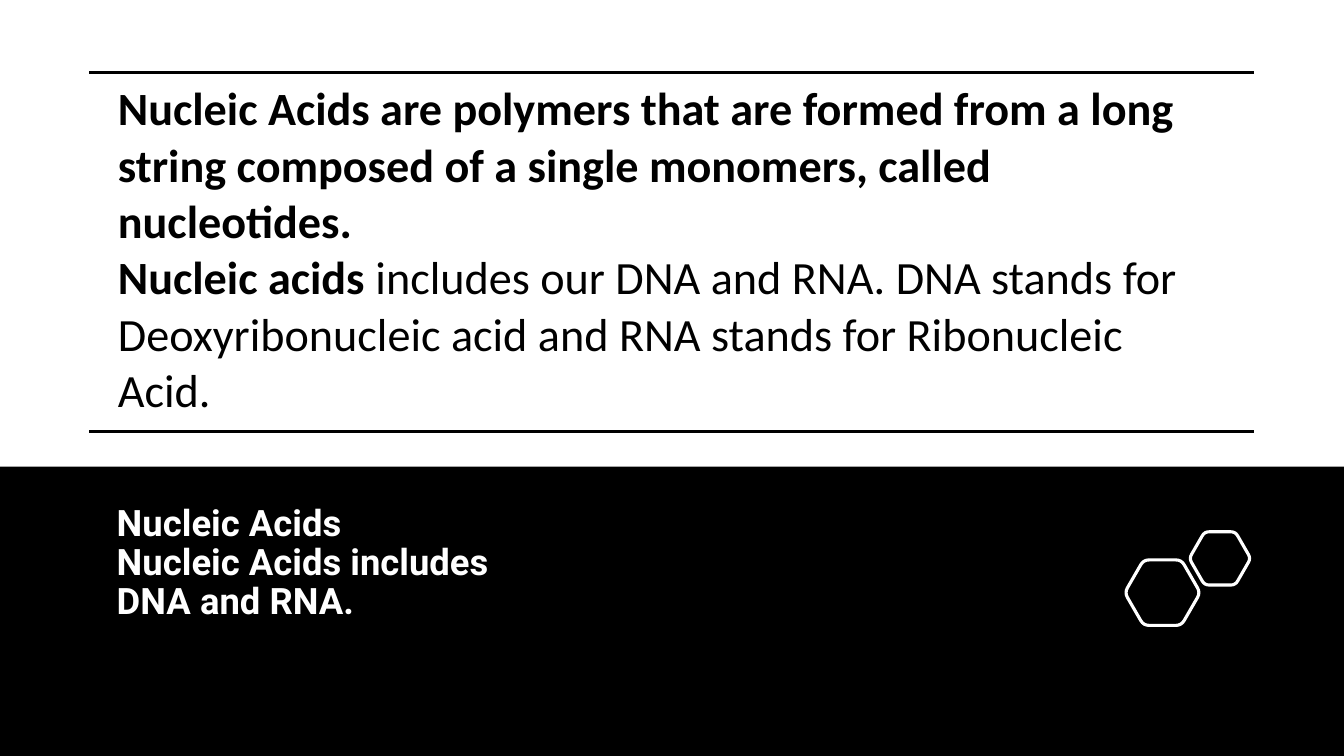
from math import cos, sin, radians
from lxml import etree
from pptx import Presentation
from pptx.dml.color import RGBColor
from pptx.enum import shapes, text
from pptx.oxml import ns
from pptx.util import Inches, Pt

# Content: one list of runs per line, each run is (words, bold)
BODY = [
    [("Nucleic Acids are polymers that are formed from a long string composed "
      "of a single monomers, called nucleotides. ", True)],
    [("Nucleic acids", True),
     (" includes our DNA and RNA. DNA stands for Deoxyribonucleic acid and RNA "
      "stands for Ribonucleic Acid.", False)],
]
TITLE = ["Nucleic Acids", "Nucleic Acids includes DNA and RNA. "]
HEXES = [(11.53, 5.88, 0.375), (12.1, 5.54, 0.305)]  # centre x, centre y, radius
WIDTH, HEIGHT, SPLIT = 13.33, 7.5, 4.63
BLACK, WHITE = "000000", "FFFFFF"


def color(code):
    return RGBColor.from_string(code)


def add_run(para, words, font, size, code, bold):
    run = para.add_run()
    run.text = words
    run.font.name, run.font.size, run.font.bold = font, Pt(size), bold
    run.font.color.rgb = color(code)


def hex_points(cx, cy, radius, cut=0.15, steps=4):
    """Corners of a hexagon, each one rounded by a short curve."""
    tips = [(cx + radius * cos(radians(a)), cy + radius * sin(radians(a)))
            for a in range(0, 360, 60)]
    points = []
    for i, tip in enumerate(tips):
        prev, after = tips[i - 1], tips[(i + 1) % 6]
        start = [t + cut * (p - t) for t, p in zip(tip, prev)]
        end = [t + cut * (n - t) for t, n in zip(tip, after)]
        for k in range(steps + 1):
            f = k / steps
            points.append(tuple((1 - f) ** 2 * s + 2 * f * (1 - f) * t + f * f * e
                                for s, t, e in zip(start, tip, end)))
    return points


def add_border(cell, side, code, width):
    line = etree.SubElement(cell._tc.get_or_add_tcPr(), ns.qn("a:" + side),
                            w=str(Pt(width)))
    fill = etree.SubElement(line, ns.qn("a:solidFill"))
    etree.SubElement(fill, ns.qn("a:srgbClr"), val=code)


deck = Presentation()
deck.slide_width, deck.slide_height = Inches(WIDTH), Inches(HEIGHT)
slide = deck.slides.add_slide(deck.slide_layouts[6])

# Black band
band = slide.shapes.add_shape(shapes.MSO_SHAPE.RECTANGLE, 0, Inches(SPLIT),
                              Inches(WIDTH), Inches(HEIGHT - SPLIT))
band.shadow.inherit = False
band.fill.solid()
band.fill.fore_color.rgb = color(BLACK)
band.line.fill.background()

# Title
box = slide.shapes.add_textbox(Inches(1.06), Inches(4.96), Inches(4.03), Inches(1.73))
frame = box.text_frame
frame.word_wrap = True
for i, words in enumerate(TITLE):
    para = frame.add_paragraph() if i else frame.paragraphs[0]
    para.line_spacing = 0.9
    add_run(para, words, "Roboto", 26, WHITE, True)

# Hexagons
for cx, cy, radius in HEXES:
    first, *rest = [(Inches(x), Inches(y)) for x, y in hex_points(cx, cy, radius)]
    build = slide.shapes.build_freeform(*first)
    build.add_line_segments(rest, close=True)
    ring = build.convert_to_shape()
    ring.shadow.inherit = False
    ring.fill.background()
    ring.line.color.rgb = color(WHITE)
    ring.line.width = Pt(2.25)

# Definition table
table = slide.shapes.add_table(1, 1, Inches(0.88), Inches(0.72),
                               Inches(11.56), Inches(3.56)).table
table.first_row = table.horz_banding = False
cell = table.cell(0, 0)
cell.margin_left = cell.margin_right = Inches(0.29)
cell.margin_top = cell.margin_bottom = Inches(0.09)
cell.vertical_anchor = text.MSO_ANCHOR.TOP
for side in ("lnT", "lnB"):
    add_border(cell, side, BLACK, 2)
cell.fill.solid()
cell.fill.fore_color.rgb = color(WHITE)
para = cell.text_frame.paragraphs[0]
for i, line in enumerate(BODY):
    if i:
        para.add_line_break()
    for words, bold in line:
        add_run(para, words, "Calibri", 33, BLACK, bold)

deck.save("out.pptx")
